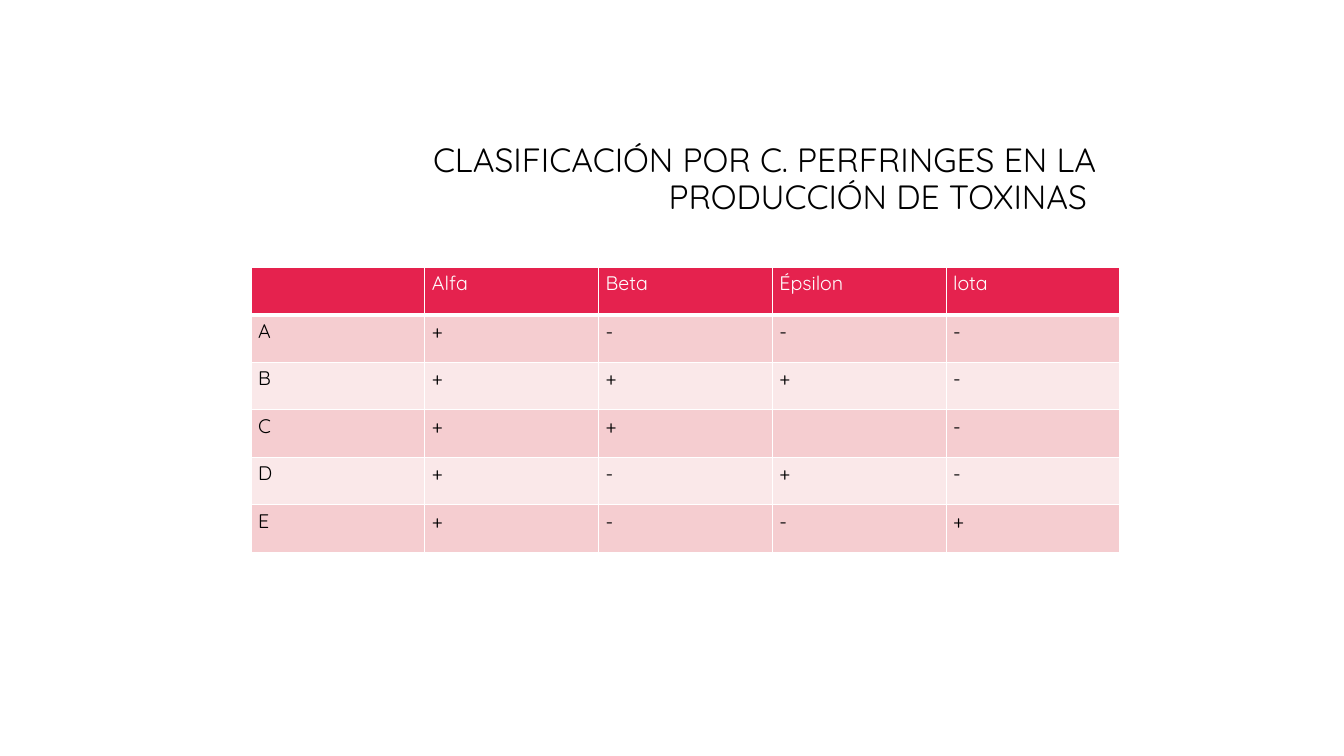
from dataclasses import dataclass

import lxml.etree
import pptx
import pptx.dml.color
import pptx.enum.text
import pptx.oxml.ns
import pptx.util

Inches = pptx.util.Inches
Pt = pptx.util.Pt


@dataclass(frozen=True)
class Theme:
    font: str = "Quicksand"
    title_size: int = 24
    table_size: int = 14
    text: str = "000000"
    white: str = "FFFFFF"
    header: str = "E5224E"
    bands: tuple = ("F5CDD0", "FAE8E9")
    border: int = 1
    header_border: int = 3


class SlideBuilder:
    def __init__(self, slide, theme):
        self.slide = slide
        self.theme = theme

    def style(self, paragraph, size, color):
        paragraph.font.name = self.theme.font
        paragraph.font.size = Pt(size)
        paragraph.font.color.rgb = pptx.dml.color.RGBColor.from_string(color)

    def title(self, text, left, top, width, height):
        shape = self.slide.shapes.add_textbox(
            Inches(left), Inches(top), Inches(width), Inches(height))
        frame = shape.text_frame
        frame.word_wrap = True
        frame.vertical_anchor = pptx.enum.text.MSO_ANCHOR.MIDDLE
        paragraph = frame.paragraphs[0]
        paragraph.text = text
        paragraph.alignment = pptx.enum.text.PP_ALIGN.RIGHT
        paragraph.line_spacing = 0.9
        self.style(paragraph, self.theme.title_size, self.theme.text)

    def borders(self, cell, bottom):
        properties = cell._tc.get_or_add_tcPr()
        widths = {side: self.theme.border for side in ("lnL", "lnR", "lnT")}
        widths["lnB"] = bottom
        for side, width in widths.items():
            line = lxml.etree.SubElement(
                properties, pptx.oxml.ns.qn(f"a:{side}"), w=str(Pt(width)))
            fill = lxml.etree.SubElement(line, pptx.oxml.ns.qn("a:solidFill"))
            lxml.etree.SubElement(
                fill, pptx.oxml.ns.qn("a:srgbClr"), val=self.theme.white)

    def cell(self, cell, text, fill, color, bottom):
        self.borders(cell, bottom)
        cell.fill.solid()
        cell.fill.fore_color.rgb = pptx.dml.color.RGBColor.from_string(fill)
        cell.margin_left = cell.margin_right = Inches(0.07)
        cell.margin_top = cell.margin_bottom = Inches(0.04)
        paragraph = cell.text_frame.paragraphs[0]
        paragraph.text = text
        self.style(paragraph, self.theme.table_size, color)

    def table(self, rows, left, top, width, height):
        theme = self.theme
        table = self.slide.shapes.add_table(
            len(rows), len(rows[0]), Inches(left), Inches(top),
            Inches(width), Inches(height)).table
        for row_index, row in enumerate(rows):
            if row_index == 0:
                look = theme.header, theme.white, theme.header_border
            else:
                band = theme.bands[(row_index - 1) % len(theme.bands)]
                look = band, theme.text, theme.border
            for column_index, text in enumerate(row):
                self.cell(table.cell(row_index, column_index), text, *look)


def main():
    presentation = pptx.Presentation()
    presentation.slide_width = Inches(13.33)
    presentation.slide_height = Inches(7.5)
    slide = presentation.slides.add_slide(presentation.slide_layouts[6])
    builder = SlideBuilder(slide, Theme())
    builder.title(
        "CLASIFICACIÓN POR C. PERFRINGES EN LA PRODUCCIÓN DE TOXINAS ",
        2.37, 1.24, 8.6, 1.09)
    toxins = [
        ("", "Alfa", "Beta", "Épsilon", "lota"),
        ("A", "+", "-", "-", "-"),
        ("B", "+", "+", "+", "-"),
        ("C", "+", "+", "", "-"),
        ("D", "+", "-", "+", "-"),
        ("E", "+", "-", "-", "+"),
    ]
    builder.table(toxins, 2.49, 2.65, 8.62, 2.83)
    presentation.save("out.pptx")


if __name__ == "__main__":
    main()
